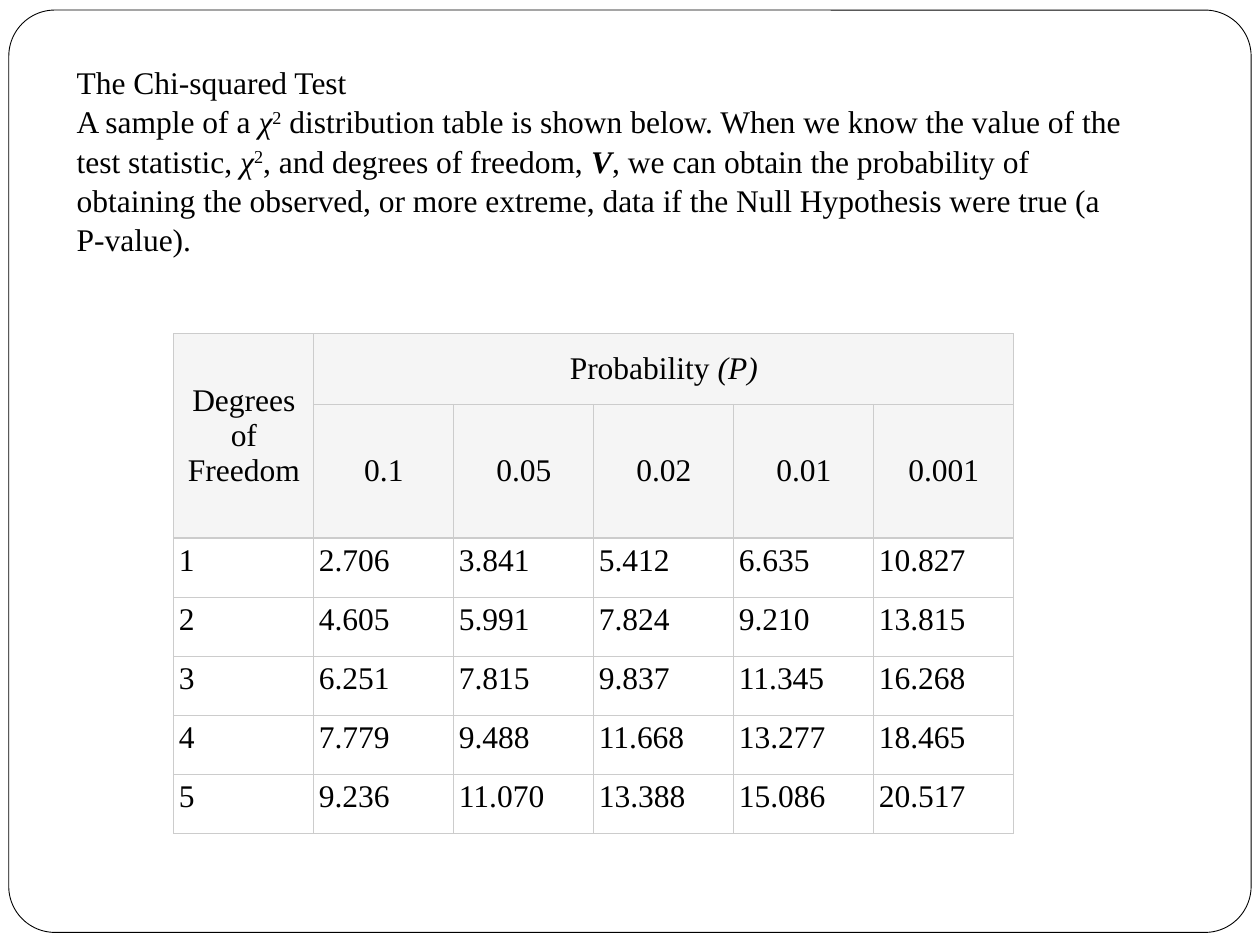
"""Build a slide that explains the chi-squared test with a distribution table."""
from lxml.etree import SubElement
from pptx import Presentation
from pptx.dml.color import RGBColor
from pptx.enum.shapes import MSO_SHAPE
from pptx.enum.text import MSO_ANCHOR as Anchor, PP_ALIGN as Align
from pptx.oxml.ns import qn
from pptx.util import Inches, Pt

HEADER_FILL, BODY_FILL, BORDER, INK = "F5F5F5", "FFFFFF", "CCCCCC", "000000"
LEVELS = ["0.1", "0.05", "0.02", "0.01", "0.001"]
CRITICAL_VALUES = [
    ["2.706", "3.841", "5.412", "6.635", "10.827"],
    ["4.605", "5.991", "7.824", "9.210", "13.815"],
    ["6.251", "7.815", "9.837", "11.345", "16.268"],
    ["7.779", "9.488", "11.668", "13.277", "18.465"],
    ["9.236", "11.070", "13.388", "15.086", "20.517"],
]
EXPLANATION = [
    ("A sample of a ", ""), ("χ", "italic"), ("2", "super"),
    (" distribution table is shown below. When we know the value of the test statistic, ", ""),
    ("χ", "italic"), ("2", "super"), (", and degrees of freedom, ", ""), ("V", "bold italic"),
    (", we can obtain the probability of obtaining the observed, or more extreme, data "
     "if the Null Hypothesis were true (a P-value).", ""),
]


def color(hex_code):
    return RGBColor.from_string(hex_code)


def write_runs(paragraph, pieces):
    for text, style in pieces:
        run = paragraph.add_run()
        run.text = text
        run.font.name, run.font.size = "Times New Roman", Pt(18)
        run.font.color.rgb = color(INK)
        run.font.bold, run.font.italic = "bold" in style, "italic" in style
        if "super" in style:
            run.font._element.set("baseline", "30000")


presentation = Presentation()
presentation.slide_width, presentation.slide_height = Inches(10), Inches(7.5)
width, height = presentation.slide_width, presentation.slide_height
slide = presentation.slides.add_slide(presentation.slide_layouts[6])

frame = slide.shapes.add_shape(
    MSO_SHAPE.ROUNDED_RECTANGLE, Inches(0.07), Inches(0.08), Inches(9.86), Inches(7.32))
frame.adjustments[0] = 0.05
frame.shadow.inherit = False
frame.fill.solid()
frame.fill.fore_color.rgb = color(BODY_FILL)
frame.line.color.rgb = color(INK)
frame.line.width = Pt(0.5)

introduction = slide.shapes.add_textbox(Inches(0.51), Inches(0.44), Inches(8.58), Inches(1.62))
introduction.text_frame.word_wrap = True
title = introduction.text_frame.paragraphs[0]
explanation = introduction.text_frame.add_paragraph()
write_runs(title, [("The Chi-squared Test", "")])
write_runs(explanation, EXPLANATION)
for paragraph in (title, explanation):
    paragraph.line_spacing = 1.04

header_rows = [
    [[("Degrees of Freedom", "")], [("Probability ", ""), ("(P)", "italic")], [], [], [], []],
    [[]] + [[(level, "")] for level in LEVELS],
]
body_rows = [[[(value, "")] for value in [str(degree)] + values]
             for degree, values in enumerate(CRITICAL_VALUES, 1)]
rows = header_rows + body_rows
row_heights = [0.56, 1.06] + [0.47] * len(body_rows)
table = slide.shapes.add_table(
    len(rows), len(rows[0]), Inches(1.38), Inches(2.65),
    width * 2 // 3, Inches(sum(row_heights))).table
table.first_row = table.horz_banding = False
for row, row_height in zip(table.rows, row_heights):
    row.height = Inches(row_height)
table.cell(0, 0).merge(table.cell(1, 0))
table.cell(0, 1).merge(table.cell(0, 5))

for row_index, row in enumerate(rows):
    is_header = row_index < len(header_rows)
    for column_index, pieces in enumerate(row):
        cell = table.cell(row_index, column_index)
        inset = Inches(0.08 if is_header else 0.04)
        cell.margin_left = cell.margin_right = cell.margin_top = cell.margin_bottom = inset
        cell.vertical_anchor = Anchor.MIDDLE if is_header else Anchor.TOP
        paragraph = cell.text_frame.paragraphs[0]
        paragraph.alignment = Align.CENTER if is_header else Align.LEFT
        write_runs(paragraph, pieces)
        properties = cell._tc.get_or_add_tcPr()
        for side in ("a:lnL", "a:lnR", "a:lnT", "a:lnB"):
            line = SubElement(properties, qn(side), w=str(Pt(0.75)))
            SubElement(SubElement(line, qn("a:solidFill")), qn("a:srgbClr"), val=BORDER)
        cell.fill.solid()
        cell.fill.fore_color.rgb = color(HEADER_FILL if is_header else BODY_FILL)

presentation.save("out.pptx")
